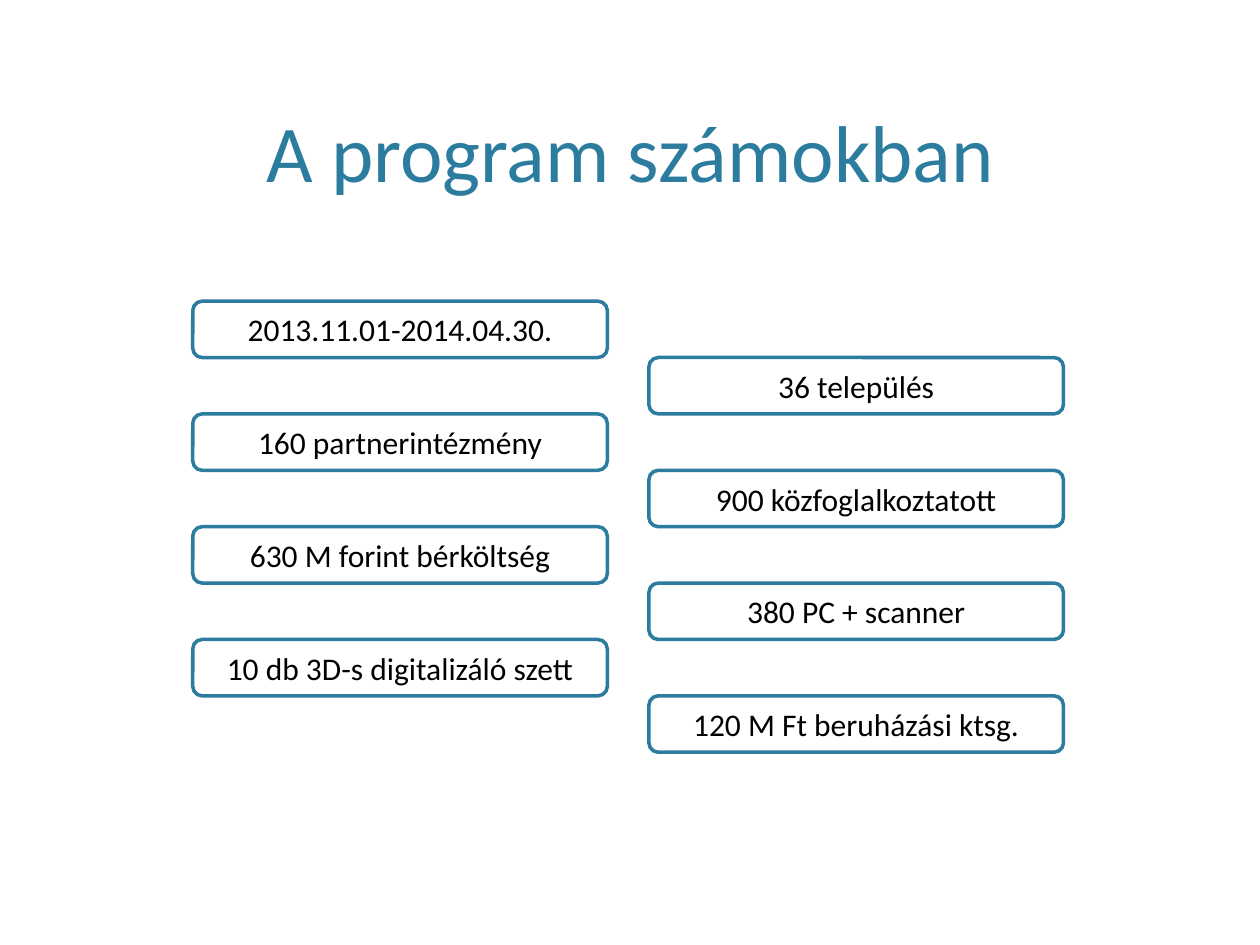
import pptx
import pptx.util
import pptx.dml.color
import pptx.enum.shapes
import pptx.enum.text

INK = {"blue": "2C7C9F", "white": "FFFFFF", "black": "000000"}
FACTS = [
    "2013.11.01-2014.04.30.",
    "36 település",
    "160 partnerintézmény",
    "900 közfoglalkoztatott",
    "630 M forint bérköltség",
    "380 PC + scanner",
    "10 db 3D-s digitalizáló szett",
    "120 M Ft beruházási ktsg.",
]
WIDE, HIGH = 10, 7.5


def color(name):
    return pptx.dml.color.RGBColor.from_string(INK[name])


def inches(box):
    return [pptx.util.Inches(v) for v in box]


def write(shape, text, size, ink):
    para = shape.text_frame.paragraphs[0]
    para.alignment = pptx.enum.text.PP_ALIGN.CENTER
    run = para.add_run()
    run.text = text
    run.font.name = "Calibri"
    run.font.size = pptx.util.Pt(size)
    run.font.color.rgb = color(ink)


def add_title(slide, box, text):
    shape = slide.shapes.add_textbox(*inches(box))
    frame = shape.text_frame
    frame.word_wrap = True
    frame.vertical_anchor = pptx.enum.text.MSO_ANCHOR.BOTTOM
    frame.margin_bottom = 0
    write(shape, text, 46, "blue")


def add_fact(slide, box, text):
    shape = slide.shapes.add_shape(
        pptx.enum.shapes.MSO_SHAPE.ROUNDED_RECTANGLE, *inches(box))
    shape.shadow.inherit = False
    shape.fill.solid()
    shape.fill.fore_color.rgb = color("white")
    shape.line.color.rgb = color("blue")
    shape.line.width = pptx.util.Pt(2)
    frame = shape.text_frame
    frame.word_wrap = True
    frame.vertical_anchor = pptx.enum.text.MSO_ANCHOR.MIDDLE
    write(shape, text, 18, "black")


def add_facts(slide, box, facts, gap):
    """Place one fact per row, switching between two columns."""
    left, top, width, height = box
    wide = (width - gap) / 2
    row = height / len(facts)
    for i, fact in enumerate(facts):
        x = left + i % 2 * (wide + gap)
        add_fact(slide, (x, top + i * row, wide, row), fact)


def main():
    deck = pptx.Presentation()
    deck.slide_width, deck.slide_height = inches((WIDE, HIGH))
    slide = deck.slides.add_slide(deck.slide_layouts[6])
    add_title(slide, (0.06 * WIDE, 0.12, 0.88 * WIDE, 1.46),
              "A program számokban")
    add_facts(slide, (1.53, 2.39, 6.91, 3.58), FACTS, 0.33)
    deck.save("out.pptx")


if __name__ == "__main__":
    main()
